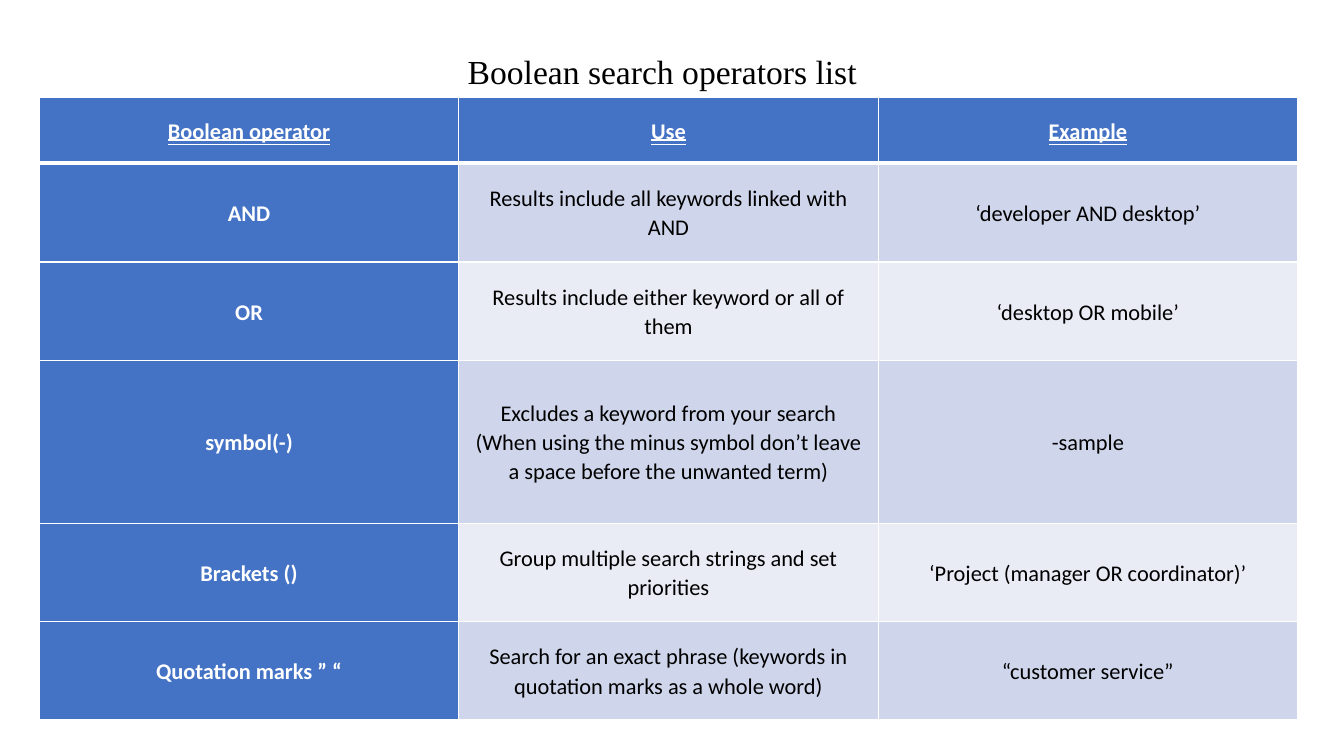
from dataclasses import dataclass

from lxml import etree
from pptx import Presentation
from pptx.dml.color import RGBColor
from pptx.enum.text import MSO_ANCHOR, MSO_UNDERLINE, PP_ALIGN
from pptx.oxml.ns import qn
from pptx.util import Emu, Pt

PX = 9144  # EMU in one px, 100 px to the inch


@dataclass(frozen=True)
class Theme:
    accent: str = "4472C4"
    bands: tuple = ("CFD5EA", "E9EBF5")
    white: str = "FFFFFF"
    black: str = "000000"
    title_font: str = "Times New Roman"
    body_font: str = "Calibri"
    title_size: int = 24
    body_size: int = 16


THEME = Theme()

HEADER = ("Boolean operator", "Use", "Example")
OPERATORS = (
    ("AND", "Results include all keywords linked with AND", "‘developer AND desktop’"),
    ("OR", "Results include either keyword or all of them", "‘desktop OR mobile’"),
    ("symbol(-)",
     "Excludes a keyword from your search (When using the minus symbol "
     "don’t leave a space before the unwanted term)", "-sample"),
    ("Brackets ()", "Group multiple search strings and set priorities",
     "‘Project (manager OR coordinator)’"),
    ("Quotation marks ” “",
     "Search for an exact phrase (keywords in quotation marks as a whole word)",
     "“customer service”"),
)
ROW_HEIGHTS = (65, 98, 98, 161, 98, 97)


def px(length):
    return Emu(length * PX)


def write_text(frame, text, *, font, size, color, bold=False, underline=None,
               align=PP_ALIGN.LEFT, line_spacing=None, space_after=None):
    frame.word_wrap = True
    paragraph = frame.paragraphs[0]
    paragraph.alignment = align
    paragraph.line_spacing = line_spacing
    paragraph.space_after = space_after
    run = paragraph.add_run()
    run.text = text
    run.font.name = font
    run.font.size = Pt(size)
    run.font.bold = bold
    run.font.underline = underline
    run.font.color.rgb = RGBColor.from_string(color)


def set_borders(cell, bottom_width):
    properties = cell._tc.get_or_add_tcPr()
    widths = {"a:lnL": 1, "a:lnR": 1, "a:lnT": 1, "a:lnB": bottom_width}
    # Border lines come before the fill in the cell properties
    for position, (tag, width) in enumerate(widths.items()):
        line = etree.Element(qn(tag), w=str(Pt(width)))
        fill = etree.SubElement(line, qn("a:solidFill"))
        etree.SubElement(fill, qn("a:srgbClr"), val=THEME.white)
        properties.insert(position, line)


def format_cell(cell, text, row, column):
    is_header = row == 0
    is_accent = is_header or column == 0
    cell.margin_left = cell.margin_right = px(16)
    cell.margin_top = cell.margin_bottom = px(16)
    cell.vertical_anchor = MSO_ANCHOR.MIDDLE
    cell.fill.solid()
    cell.fill.fore_color.rgb = RGBColor.from_string(
        THEME.accent if is_accent else THEME.bands[(row - 1) % 2])
    set_borders(cell, bottom_width=3 if is_header else 1)
    write_text(cell.text_frame, text, font=THEME.body_font, size=THEME.body_size,
               color=THEME.white if is_accent else THEME.black, bold=is_accent,
               underline=MSO_UNDERLINE.DOUBLE_LINE if is_header else None,
               align=PP_ALIGN.CENTER, line_spacing=1.07, space_after=Pt(2))


def add_operator_table(slide, left, top, width):
    rows = (HEADER, *OPERATORS)
    table = slide.shapes.add_table(
        len(rows), len(HEADER), px(left), px(top), px(width), px(sum(ROW_HEIGHTS))).table
    table.horz_banding = False
    for column in table.columns:
        column.width = px(width // len(HEADER))
    for row, texts in enumerate(rows):
        table.rows[row].height = px(ROW_HEIGHTS[row])
        for column, text in enumerate(texts):
            format_cell(table.cell(row, column), text, row, column)


def add_title(slide, left, top, width, height):
    box = slide.shapes.add_textbox(px(left), px(top), px(width), px(height))
    write_text(box.text_frame, "Boolean search operators list", font=THEME.title_font,
               size=THEME.title_size, color=THEME.black)


def main():
    presentation = Presentation()
    presentation.slide_width, presentation.slide_height = px(1333), px(750)
    slide = presentation.slides.add_slide(presentation.slide_layouts[6])
    # Table of operators, then the title above it
    add_operator_table(slide, 39, 97, 1248)
    add_title(slide, 454, 46, 515, 50)
    presentation.save("out.pptx")


if __name__ == "__main__":
    main()
